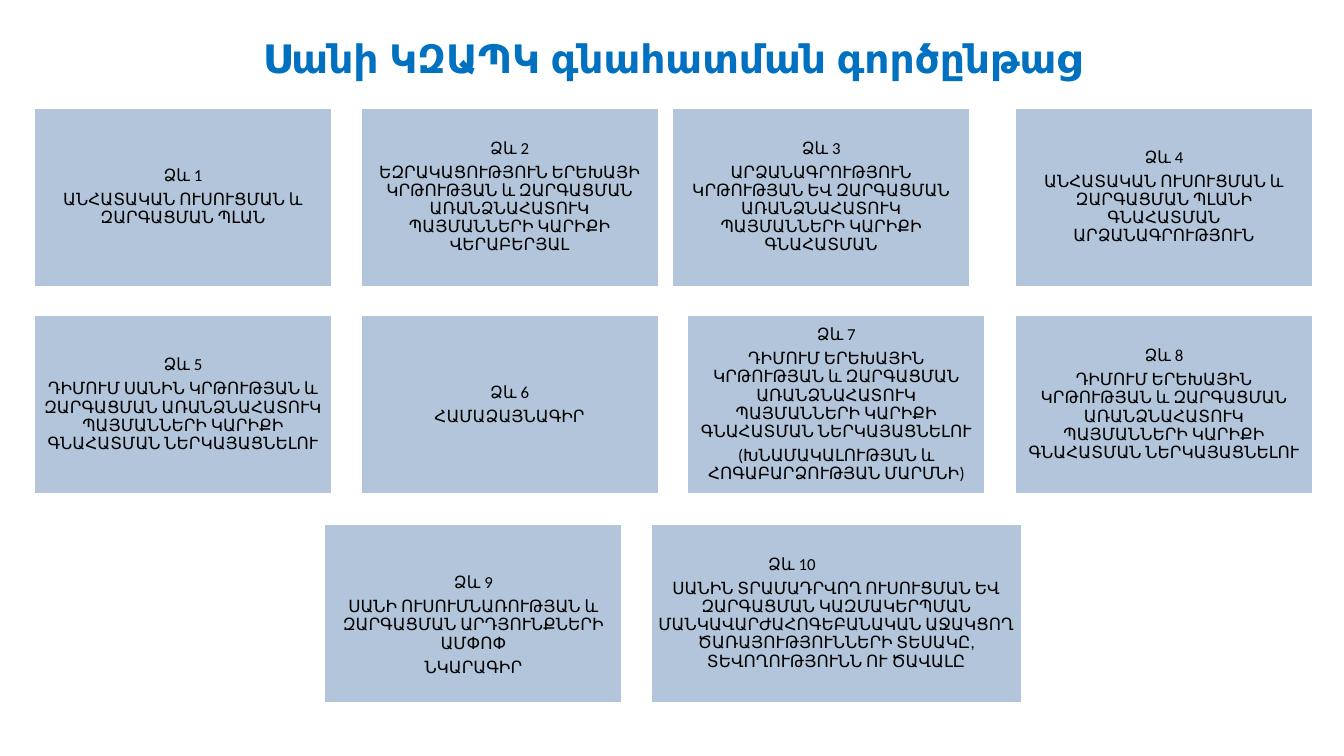
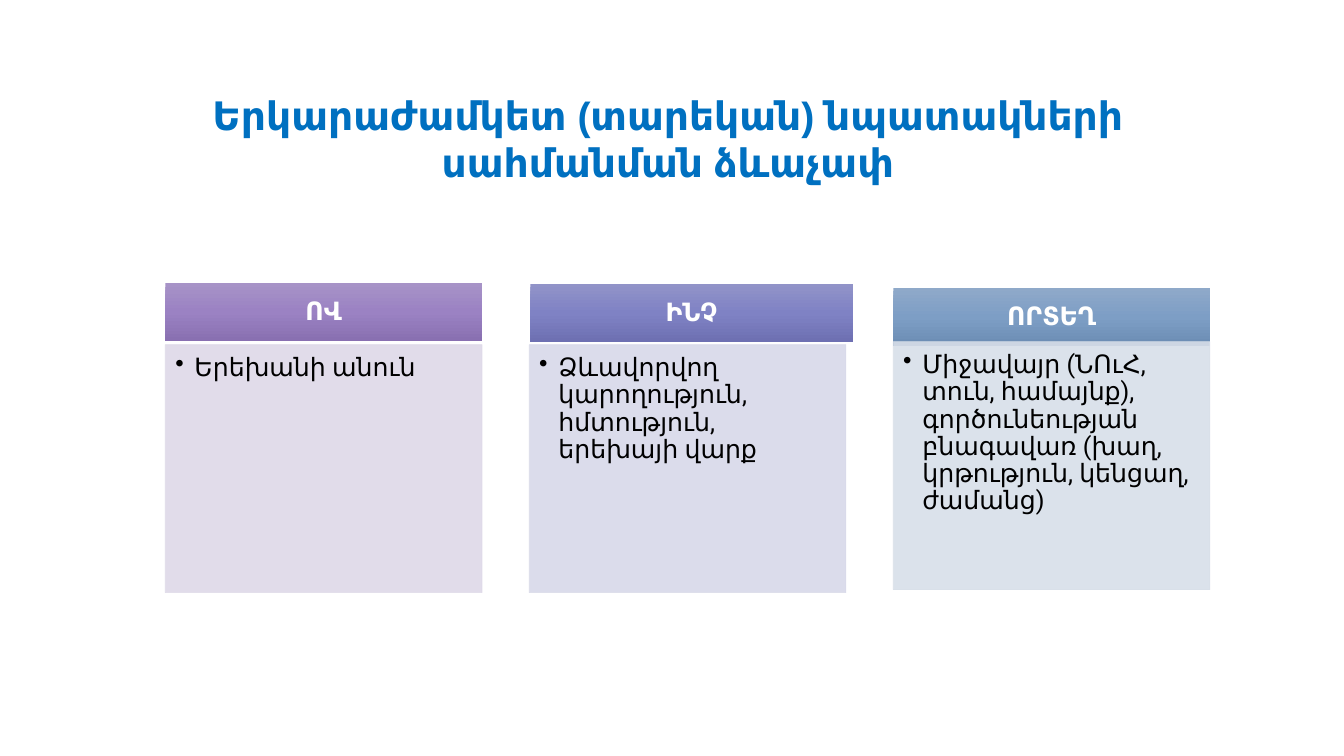
from dataclasses import dataclass

from lxml.etree import SubElement
from pptx import Presentation
from pptx.dml.color import RGBColor as Rgb
from pptx.enum.shapes import MSO_SHAPE as Preset
from pptx.enum.text import MSO_ANCHOR as Anchor, PP_ALIGN as Align
from pptx.oxml import parse_xml
from pptx.oxml.ns import nsdecls, qn
from pptx.util import Emu, Pt

# Shared scale, colours and sizes
PX = 9144  # EMU in one px, 100 px to the inch
PAGE_SIZE = (1333, 750)
COLORS = {"title": "0070C0", "tile": "B3C5DA", "white": "FFFFFF", "black": "000000"}

# Grid of form tiles
TILE_WIDTH, TILE_HEIGHT = 295, 177
ROW_LEFTS = (34, 34, 322)
FIRST_TOP = 107
TILE_INSET = 5

# Goal columns
COLUMN_WIDTH, HEADER_HEIGHT, BODY_HEIGHT = 314, 57, 246
BULLET_INDENT = 19


@dataclass(frozen=True)
class Tile:
    lines: tuple[str, ...]
    width: int = TILE_WIDTH
    shift: int = 0  # sideways offset from the grid
    drop: int = 0  # extra space above the text
    label_indent: int | None = None  # left-aligned label when given


@dataclass(frozen=True)
class GoalColumn:
    heading: str
    text: str
    gradient: tuple[str, str, str]
    tint: str
    header_at: tuple[int, int]
    body_at: tuple[int, int]
    header_width: int = COLUMN_WIDTH


REQUEST = ("ԴԻՄՈՒՄ ԵՐԵԽԱՅԻՆ ԿՐԹՈՒԹՅԱՆ և ԶԱՐԳԱՑՄԱՆ ԱՌԱՆՁՆԱՀԱՏՈՒԿ "
           "ՊԱՅՄԱՆՆԵՐԻ ԿԱՐԻՔԻ ԳՆԱՀԱՏՄԱՆ ՆԵՐԿԱՅԱՑՆԵԼՈՒ")

TILE_ROWS = (
    (
        Tile(("ԱՆՀԱՏԱԿԱՆ ՈՒՍՈՒՑՄԱՆ և ԶԱՐԳԱՑՄԱՆ ՊԼԱՆ",)),
        Tile(("ԵԶՐԱԿԱՑՈՒԹՅՈՒՆ ԵՐԵԽԱՅԻ ԿՐԹՈՒԹՅԱՆ և ԶԱՐԳԱՑՄԱՆ "
              "ԱՌԱՆՁՆԱՀԱՏՈՒԿ ՊԱՅՄԱՆՆԵՐԻ ԿԱՐԻՔԻ ՎԵՐԱԲԵՐՅԱԼ",)),
        Tile(("ԱՐՁԱՆԱԳՐՈՒԹՅՈՒՆ ԿՐԹՈՒԹՅԱՆ ԵՎ ԶԱՐԳԱՑՄԱՆ "
              "ԱՌԱՆՁՆԱՀԱՏՈՒԿ ՊԱՅՄԱՆՆԵՐԻ ԿԱՐԻՔԻ ԳՆԱՀԱՏՄԱՆ",), shift=-15),
        Tile(("ԱՆՀԱՏԱԿԱՆ ՈՒՍՈՒՑՄԱՆ և ԶԱՐԳԱՑՄԱՆ ՊԼԱՆԻ "
              "ԳՆԱՀԱՏՄԱՆ ԱՐՁԱՆԱԳՐՈՒԹՅՈՒՆ",)),
    ),
    (
        Tile(("ԴԻՄՈՒՄ ՍԱՆԻՆ ԿՐԹՈՒԹՅԱՆ և ԶԱՐԳԱՑՄԱՆ ԱՌԱՆՁՆԱՀԱՏՈՒԿ "
              "ՊԱՅՄԱՆՆԵՐԻ ԿԱՐԻՔԻ ԳՆԱՀԱՏՄԱՆ ՆԵՐԿԱՅԱՑՆԵԼՈՒ",)),
        Tile(("ՀԱՄԱՁԱՅՆԱԳԻՐ",)),
        Tile((REQUEST, "(ԽՆԱՄԱԿԱԼՈՒԹՅԱՆ և ՀՈԳԱԲԱՐՁՈՒԹՅԱՆ ՄԱՐՄՆԻ)")),
        Tile((REQUEST,)),
    ),
    (
        Tile(("ՍԱՆԻ ՈՒՍՈՒՄՆԱՌՈՒԹՅԱՆ և ԶԱՐԳԱՑՄԱՆ ԱՐԴՅՈՒՆՔՆԵՐԻ ԱՄՓՈՓ", "ՆԿԱՐԱԳԻՐ"),
             drop=24),
        Tile(("ՍԱՆԻՆ ՏՐԱՄԱԴՐՎՈՂ ՈՒՍՈՒՑՄԱՆ ԵՎ ԶԱՐԳԱՑՄԱՆ ԿԱԶՄԱԿԵՐՊՄԱՆ "
              "ՄԱՆԿԱՎԱՐԺԱՀՈԳԵԲԱՆԱԿԱՆ ԱՋԱԿՑՈՂ ԾԱՌԱՅՈՒԹՅՈՒՆՆԵՐԻ ՏԵՍԱԿԸ, "
              "ՏԵՎՈՂՈՒԹՅՈՒՆՆ ՈՒ ԾԱՎԱԼԸ",), width=367, label_indent=111),
    ),
)

GOAL_COLUMNS = (
    GoalColumn("ՈՎ", "Երեխանի անուն",
               ("A793C7", "9B82C3", "8970B1"), "DED9E8", (164, 281), (164, 342)),
    GoalColumn("ԻՆՉ", "Ձևավորվող կարողություն, հմտություն, երեխայի վարք",
               ("9193C8", "7F82C4", "6E70B2"), "D8D9E9", (526, 282), (525, 342),
               header_width=320),
    GoalColumn("ՈՐՏԵՂ", "Միջավայր (ՆՈւՀ, տուն, համայնք), գործունեության "
               "բնագավառ (խաղ, կրթություն, կենցաղ, ժամանց)",
               ("8FA9C9", "7D9EC5", "6B8CB3"), "D8DFE9", (886, 286), (886, 339)),
)


def px(length: int) -> Emu:
    return Emu(length * PX)


def set_frame(frame, insets: tuple[int, int, int, int], anchor=Anchor.TOP) -> None:
    frame.word_wrap = True
    frame.vertical_anchor = anchor
    (frame.margin_left, frame.margin_top,
     frame.margin_right, frame.margin_bottom) = map(px, insets)


def add_para(frame, text: str, *, size: int, font: str, color: str = "black",
             bold: bool = False, align=Align.CENTER, line: float = 0.9,
             after: float = 0, indent: int = 0, bullet: str = "") -> None:
    """Fill the frame's empty first paragraph, or append another one."""
    para = frame.paragraphs[0]
    if para.runs:
        para = frame.add_paragraph()
    para.alignment, para.line_spacing, para.space_after = align, line, Pt(after)
    props = para._p.get_or_add_pPr()
    if indent:
        props.set("marL", str(px(indent)))
    if bullet:
        props.set("indent", str(-px(indent)))
        SubElement(props, qn("a:buChar"), char=bullet)
    span = para.add_run()
    span.text = text
    span.font.size, span.font.name, span.font.bold = Pt(size), font, bold
    span.font.color.rgb = Rgb.from_string(COLORS[color])


def add_box(page, left: int, top: int, width: int, height: int):
    box = page.shapes.add_shape(Preset.RECTANGLE, *map(px, (left, top, width, height)))
    box.shadow.inherit = False
    box.line.fill.background()
    return box


def paint(box, fill: str, line: str, weight: float, opacity: int = 100) -> None:
    box.fill.solid()
    box.fill.fore_color.rgb = Rgb.from_string(fill)
    box.line.color.rgb = Rgb.from_string(line)
    box.line.width = Pt(weight)
    if opacity < 100:
        for color in box._element.spPr.xpath(".//a:srgbClr"):
            SubElement(color, qn("a:alpha"), val=str(opacity * 1000))


def paint_gradient(box, colors: tuple[str, str, str]) -> None:
    """Spread three colours evenly from top to bottom."""
    stops = "".join(f'<a:gs pos="{index * 50000}"><a:srgbClr val="{color}"/></a:gs>'
                    for index, color in enumerate(colors))
    box.fill.background()
    props = box._element.spPr
    props.replace(props.find(qn("a:noFill")), parse_xml(
        f'<a:gradFill {nsdecls("a")}><a:gsLst>{stops}</a:gsLst>'
        '<a:lin ang="5400000" scaled="0"/></a:gradFill>'))


def add_title(page, lines: tuple[str, ...], at: tuple[int, int, int, int],
              spacing: float) -> None:
    frame = page.shapes.add_textbox(*map(px, at)).text_frame
    set_frame(frame, (10, 5, 10, 5))
    for text in lines:
        add_para(frame, text, size=28, font="Arial", color="title", bold=True,
                 line=spacing)


def add_tile(page, tile: Tile, number: int, left: int, top: int) -> None:
    box = add_box(page, left, top, tile.width, TILE_HEIGHT)
    paint(box, COLORS["tile"], COLORS["white"], 1)
    frame = box.text_frame
    set_frame(frame, (TILE_INSET, TILE_INSET + tile.drop, TILE_INSET, TILE_INSET),
              Anchor.MIDDLE)
    style = {"size": 12, "font": "Calibri", "after": 4.2}
    label_align = Align.CENTER if tile.label_indent is None else Align.LEFT
    add_para(frame, f"Ձև {number}", align=label_align,
             indent=tile.label_indent or 0, **style)
    for text in tile.lines:
        add_para(frame, text, **style)


def add_goal_column(page, column: GoalColumn) -> None:
    header = add_box(page, *column.header_at, column.header_width, HEADER_HEIGHT)
    paint_gradient(header, column.gradient)
    set_frame(header.text_frame, (14, 8, 14, 8), Anchor.MIDDLE)
    add_para(header.text_frame, column.heading, size=18, font="Roboto",
             color="white", bold=True, after=6.3)

    body = add_box(page, *column.body_at, COLUMN_WIDTH, BODY_HEIGHT)
    paint(body, column.tint, column.tint, 0.5, opacity=90)
    set_frame(body.text_frame, (10, 10, 14, 16))
    add_para(body.text_frame, column.text, size=18, font="Roboto", align=Align.LEFT,
             after=2.7, indent=BULLET_INDENT, bullet="•")


def build_forms(page) -> None:
    number = 0
    for row, tiles in enumerate(TILE_ROWS):
        top = FIRST_TOP + row * 413 // 2
        for column, tile in enumerate(tiles):
            number += 1
            left = ROW_LEFTS[row] + column * 973 // 3 + tile.shift
            add_tile(page, tile, number, left, top)
    add_title(page, ("Սանի ԿԶԱՊԿ գնահատման գործընթաց",), (92, 34, 1150, 99), 0.9)


def build_goals(page) -> None:
    for column in GOAL_COLUMNS:
        add_goal_column(page, column)
    add_title(page, ("Երկարաժամկետ (տարեկան) նպատակների", "սահմանման ձևաչափ"),
              (37, 86, 1251, 104), 1.0)


def main() -> None:
    deck = Presentation()
    deck.slide_width, deck.slide_height = map(px, PAGE_SIZE)
    blank = deck.slide_layouts[6]
    for build in (build_forms, build_goals):
        build(deck.slides.add_slide(blank))
    deck.save("out.pptx")


if __name__ == "__main__":
    main()
